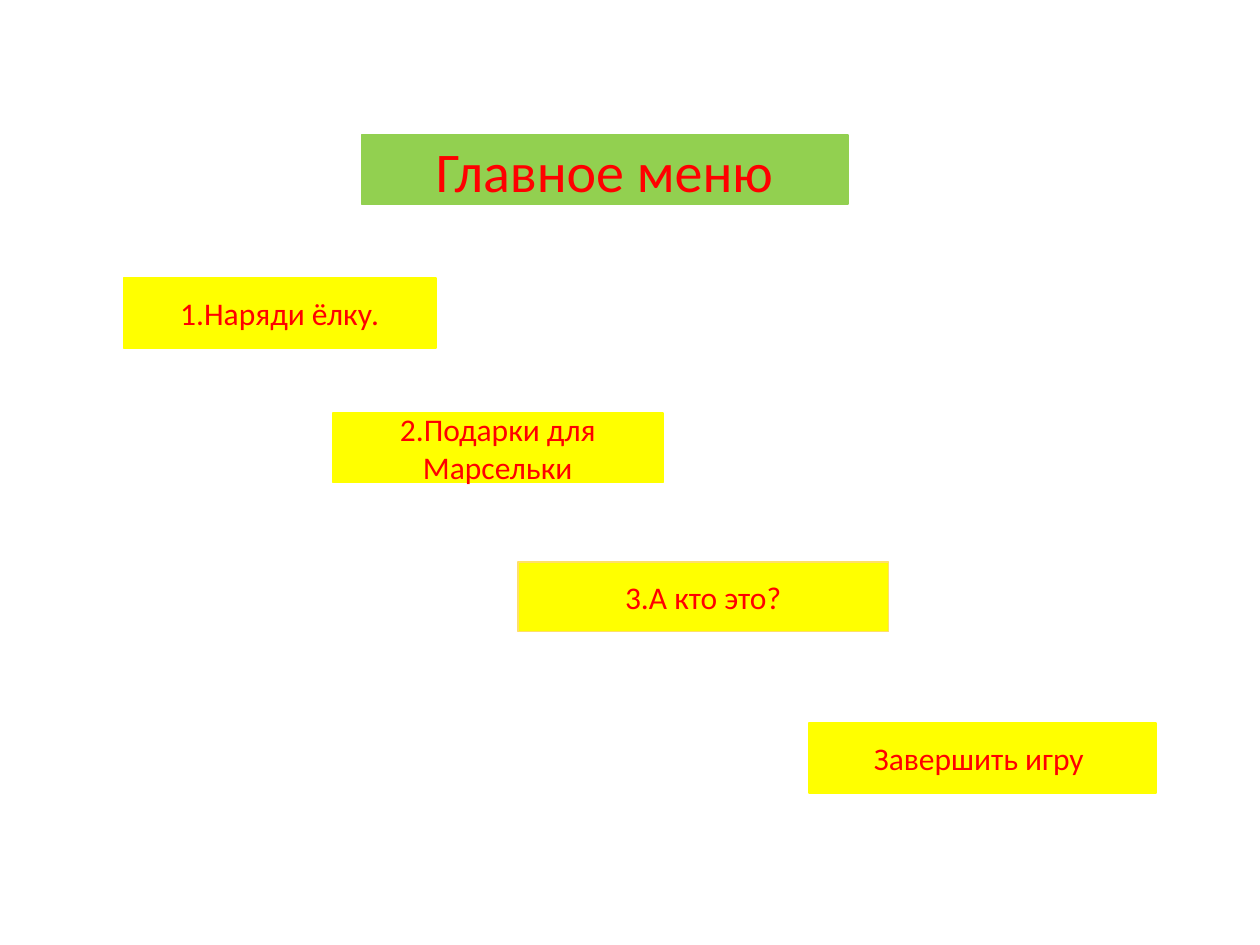
"""Build the main menu slide of a children's game."""
from dataclasses import dataclass
from typing import NamedTuple

from pptx import Presentation
from pptx import util as u
from pptx.dml.color import RGBColor
from pptx.enum import shapes, text


@dataclass(frozen=True)
class Theme:
    font: str = "Calibri"
    ink: str = "FF0000"
    head: str = "92D050"
    key: str = "FFFF00"
    edge: str = "FFDF6A"
    big: int = 32
    small: int = 18
    line: int = 1
    high: float = 1.4


class Key(NamedTuple):
    label: str
    left: float
    top: float
    width: float
    edge: str


THEME = Theme()
KEYS = [
    Key("1.Наряди ёлку.", 2.49, 5.61, 6.3, THEME.key),
    Key("2.Подарки для Марсельки", 6.71, 8.33, 6.65, THEME.key),
    Key("3.А кто это?", 10.44, 11.33, 7.47, THEME.edge),
    Key("Завершить игру ", 16.31, 14.58, 6.99, THEME.key),
]


def style(box, label: str, fill: str, edge: str, size: int) -> None:
    box.fill.solid()
    box.fill.fore_color.rgb = RGBColor.from_string(fill)
    box.line.color.rgb = RGBColor.from_string(edge)
    box.line.width = u.Pt(THEME.line)
    frame = box.text_frame
    frame.text = label
    frame.word_wrap = True
    frame.auto_size = text.MSO_AUTO_SIZE.NONE
    frame.vertical_anchor = text.MSO_ANCHOR.MIDDLE
    para = frame.paragraphs[0]
    para.alignment = text.PP_ALIGN.CENTER
    font = para.runs[0].font
    font.name = THEME.font
    font.size = u.Pt(size)
    font.color.rgb = RGBColor.from_string(THEME.ink)


def add_key(slide, key: Key) -> None:
    box = slide.shapes.add_shape(
        shapes.MSO_SHAPE.ACTION_BUTTON_CUSTOM,
        u.Cm(key.left), u.Cm(key.top), u.Cm(key.width), u.Cm(THEME.high),
    )
    box.shadow.inherit = False
    style(box, key.label, THEME.key, key.edge, THEME.small)


def main() -> None:
    deck = Presentation()
    deck.slide_width, deck.slide_height = u.Cm(25.4), u.Cm(19.05)
    slide = deck.slides.add_slide(deck.slide_layouts[5])
    title = slide.shapes.title
    title.left, title.top = u.Cm(7.29), u.Cm(2.72)
    title.width, title.height = u.Cm(9.8), u.Cm(THEME.high)
    style(title, "Главное меню", THEME.head, THEME.head, THEME.big)
    for key in KEYS:
        add_key(slide, key)
    deck.save("out.pptx")


if __name__ == "__main__":
    main()
